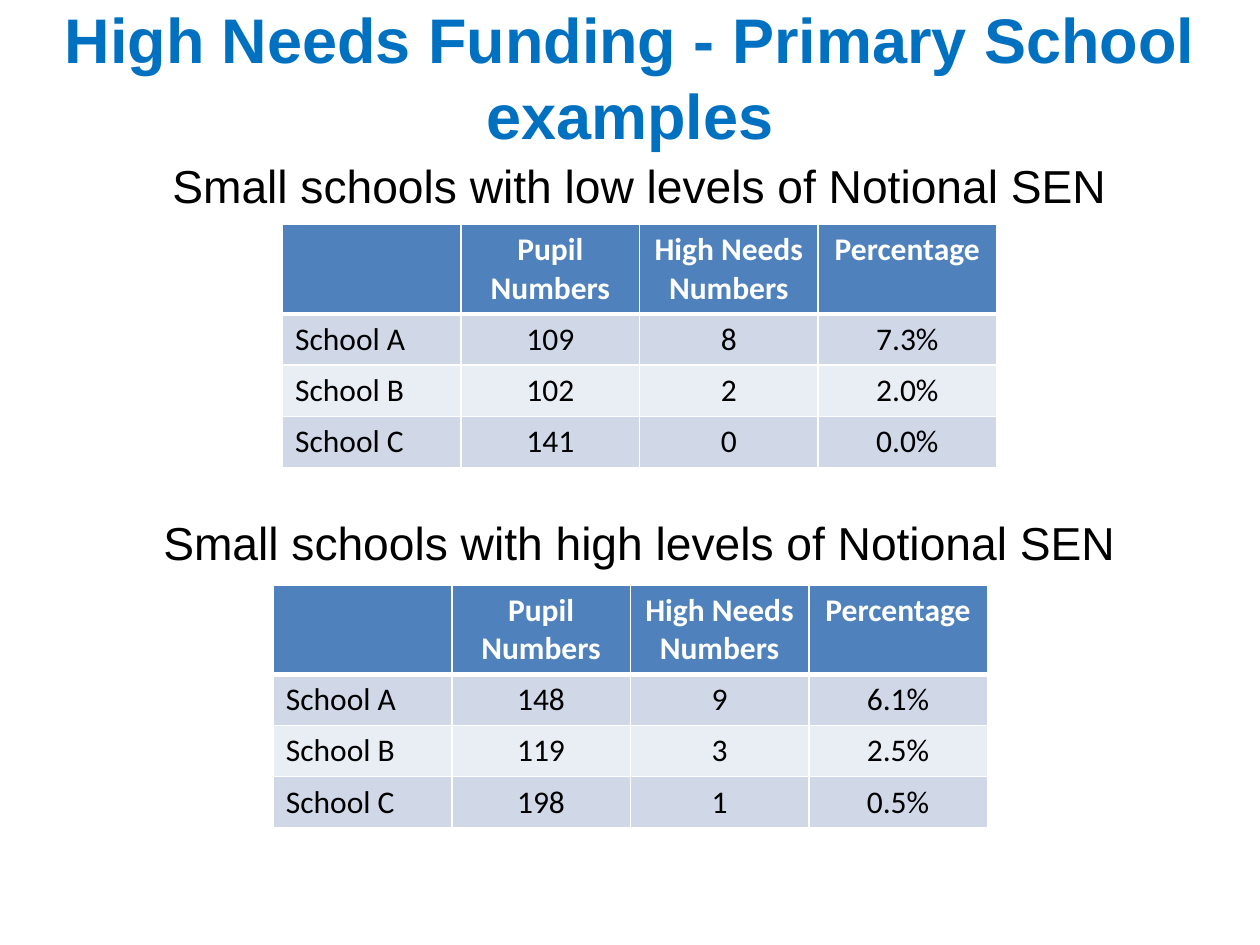
from lxml.etree import SubElement
from pptx import Presentation
from pptx.dml.color import RGBColor as Color
from pptx.enum.text import MSO_ANCHOR as Anchor, MSO_AUTO_SIZE as AutoSize, PP_ALIGN as Align
from pptx.oxml.ns import qn
from pptx.util import Pt

WHITE, BLACK = "FFFFFF", "000000"
HEADER_FILL, BAND_FILLS = "4F81BD", ("D0D8E8", "E9EDF4")
HEADINGS = ("", "Pupil Numbers", "High Needs Numbers", "Percentage")
HEADER_HEIGHT, ROW_HEIGHT = 50.8, 29.2

LOW_SEN = (
    ("School A", "109", "8", "7.3%"),
    ("School B", "102", "2", "2.0%"),
    ("School C", "141", "0", "0.0%"),
)
HIGH_SEN = (
    ("School A", "148", "9", "6.1%"),
    ("School B", "119", "3", "2.5%"),
    ("School C", "198", "1", "0.5%"),
)


def color(value):
    return Color.from_string(value)


def write(frame, text, size=18, font="Calibri", fill=BLACK, bold=False, align=Align.CENTER):
    para = frame.paragraphs[0]
    para.alignment = align
    span = para.add_run()
    span.text = text
    span.font.size = Pt(size)
    span.font.name = font
    span.font.bold = bold
    span.font.color.rgb = color(fill)


def center_frame(frame):
    frame.word_wrap = True
    frame.auto_size = AutoSize.NONE
    frame.vertical_anchor = Anchor.MIDDLE


def set_borders(cell, top=1, bottom=1):
    properties = cell._tc.get_or_add_tcPr()
    for side, width in (("L", 1), ("R", 1), ("T", top), ("B", bottom)):
        line = SubElement(properties, qn(f"a:ln{side}"), w=str(Pt(width)))
        fill = SubElement(line, qn("a:solidFill"))
        SubElement(fill, qn("a:srgbClr"), val=WHITE)


def place_title(page, text, left, top, width, height):
    title = page.shapes.title
    title.left, title.top, title.width, title.height = map(Pt, (left, top, width, height))
    center_frame(title.text_frame)
    write(title.text_frame, text, size=36, font="Arial", fill="0070C0", bold=True)


def add_subtitle(page, text, left, top, width, height):
    box = page.shapes.add_textbox(*map(Pt, (left, top, width, height)))
    center_frame(box.text_frame)
    write(box.text_frame, text, size=26.4, font="Arial")


def add_school_table(page, schools, left, top, width):
    rows = (HEADINGS, *schools)
    height = HEADER_HEIGHT + ROW_HEIGHT * len(schools)
    box = page.shapes.add_table(len(rows), len(HEADINGS), *map(Pt, (left, top, width, height)))
    table = box.table
    for column in table.columns:
        column.width = Pt(width / len(HEADINGS))
    for row, values in enumerate(rows):
        header = row == 0
        table.rows[row].height = Pt(HEADER_HEIGHT if header else ROW_HEIGHT)
        for column, value in enumerate(values):
            cell = table.cell(row, column)
            set_borders(cell, top=3 if row == 1 else 1, bottom=3 if header else 1)
            cell.fill.solid()
            cell.fill.fore_color.rgb = color(HEADER_FILL if header else BAND_FILLS[(row - 1) % 2])
            if value:
                write(cell.text_frame, value, fill=WHITE if header else BLACK, bold=header,
                      align=Align.LEFT if column == 0 else Align.CENTER)


def main():
    deck = Presentation()
    deck.slide_width, deck.slide_height = Pt(720), Pt(540)
    page = deck.slides.add_slide(deck.slide_layouts[5])
    place_title(page, "High Needs Funding - Primary School examples", 0, 15, 720, 57)
    add_subtitle(page, "Small schools with low levels of Notional SEN", 59.5, 77, 612, 57)
    add_school_table(page, LOW_SEN, 161.5, 128.3, 408)
    add_subtitle(page, "Small schools with high levels of Notional SEN", 59.5, 281.5, 612, 57)
    add_school_table(page, HIGH_SEN, 156.2, 334.3, 408)
    deck.save("out.pptx")


if __name__ == "__main__":
    main()
